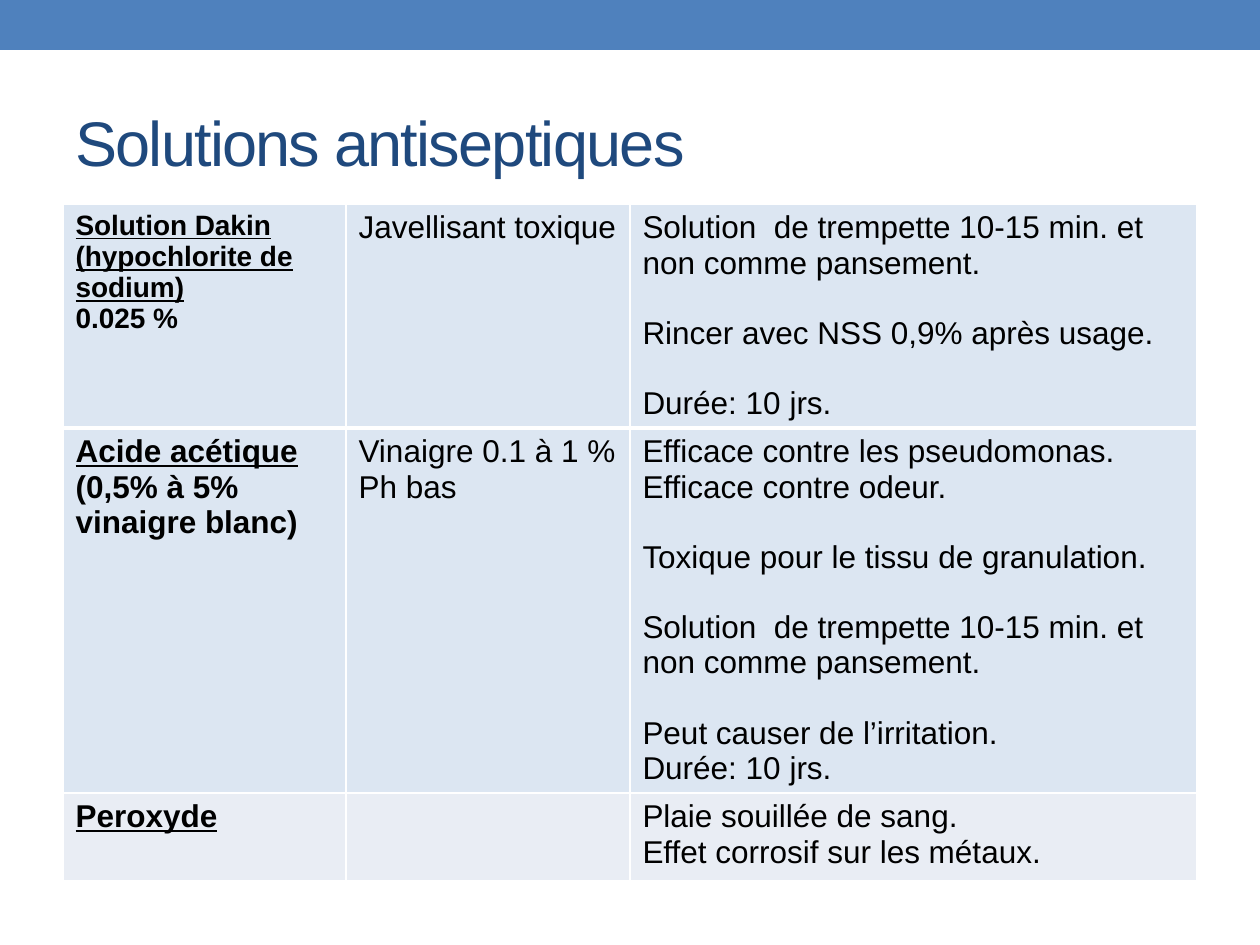
from dataclasses import dataclass

from lxml.etree import SubElement
from pptx import Presentation
from pptx.dml.color import RGBColor
from pptx.enum.shapes import MSO_SHAPE
from pptx.enum.text import MSO_ANCHOR
from pptx.oxml.ns import qn
from pptx.util import Emu, Pt

PX = 914400 // 126
WHITE, BLACK, BAND_BLUE, TITLE_BLUE = "FFFFFF", "000000", "4F81BD", "1F497D"
PALE_BLUE, PALE_GREY = "DCE6F2", "E9EDF4"

HEADING = {"bold": True, "underline": True}
DETAIL = {"bold": True, "underline": False}
PLAIN = {"bold": False, "underline": False}


@dataclass
class Line:
    text: str
    style: dict
    gap: int = 0  # points before the paragraph
    size: int = 18


@dataclass
class Antiseptic:
    name: list[Line]
    nature: list[Line]
    usage: list[Line]
    height: int
    fill: str


def px(length: int) -> Emu:
    return Emu(length * PX)


def color(value: str) -> RGBColor:
    return RGBColor.from_string(value)


def format_font(font, size: int, ink: str, style: dict) -> None:
    for attribute, value in {"name": "Arial", "size": Pt(size), **style}.items():
        setattr(font, attribute, value)
    font.color.rgb = color(ink)


def draw_border(cell, side: str, points: int) -> None:
    border = SubElement(cell._tc.get_or_add_tcPr(), qn(f"a:ln{side}"), w=str(Pt(points)))
    SubElement(SubElement(border, qn("a:solidFill")), qn("a:srgbClr"), val=WHITE)


def fill_cell(cell, lines: list[Line], fill: str, top: int, bottom: int) -> None:
    for side, points in {"L": 1, "R": 1, "T": top, "B": bottom}.items():
        draw_border(cell, side, points)
    cell.fill.solid()
    cell.fill.fore_color.rgb = color(fill)
    frame = cell.text_frame
    for index, line in enumerate(lines):
        paragraph = frame.add_paragraph() if index else frame.paragraphs[0]
        if line.gap:
            paragraph.space_before = Pt(line.gap)
        run = paragraph.add_run()
        run.text = line.text
        format_font(run.font, line.size, BLACK, line.style)


def draw_table(slide, rows: list[Antiseptic], widths: list[int]) -> None:
    height = sum(row.height for row in rows)
    table = slide.shapes.add_table(
        len(rows), len(widths), px(63), px(204), px(sum(widths)), px(height)
    ).table
    table.first_row = table.horz_banding = False
    for column, width in zip(table.columns, widths):
        column.width = px(width)
    for index, row in enumerate(rows):
        table.rows[index].height = px(row.height)
        # A thick rule separates the first row from the rest
        top, bottom = (3 if index == 1 else 1), (3 if index == 0 else 1)
        for column, lines in enumerate((row.name, row.nature, row.usage)):
            fill_cell(table.cell(index, column), lines, row.fill, top, bottom)


def draw_band(slide) -> None:
    band = slide.shapes.add_shape(MSO_SHAPE.RECTANGLE, 0, 0, px(1260), px(50))
    band.shadow.inherit = False
    band.fill.solid()
    band.fill.fore_color.rgb = color(BAND_BLUE)
    band.line.fill.background()


def draw_title(slide, text: str) -> None:
    frame = slide.shapes.add_textbox(px(63), px(73), px(1134), px(136)).text_frame
    frame.word_wrap = True
    frame.vertical_anchor = MSO_ANCHOR.MIDDLE
    run = frame.paragraphs[0].add_run()
    run.text = text
    format_font(run.font, 36, TITLE_BLUE, {})
    run.font._element.set("spc", "-100")


SOAK = "Solution  de trempette 10-15 min. et non comme pansement."
DURATION = "Durée: 10 jrs."
BLANK_LINE = 20

ANTISEPTICS = [
    Antiseptic(
        [Line("Solution Dakin (hypochlorite de sodium)", HEADING, size=16),
         Line("0.025 %", DETAIL, size=16)],
        [Line("Javellisant toxique", PLAIN)],
        [Line(SOAK, PLAIN),
         Line("Rincer avec NSS 0,9% après usage.", PLAIN, BLANK_LINE),
         Line(DURATION, PLAIN, BLANK_LINE)],
        224, PALE_BLUE,
    ),
    Antiseptic(
        [Line("Acide acétique", HEADING), Line("(0,5% à 5% vinaigre blanc)", DETAIL)],
        [Line("Vinaigre 0.1 à 1 %", PLAIN), Line("Ph bas", PLAIN)],
        [Line("Efficace contre les pseudomonas.", PLAIN),
         Line("Efficace contre odeur.", PLAIN),
         Line("Toxique pour le tissu de granulation.", PLAIN, BLANK_LINE),
         Line(SOAK, PLAIN, BLANK_LINE),
         Line("Peut causer de l’irritation.", PLAIN, BLANK_LINE),
         Line(DURATION, PLAIN)],
        365, PALE_BLUE,
    ),
    Antiseptic(
        [Line("Peroxyde", HEADING)],
        [],
        [Line("Plaie souillée de sang.", PLAIN),
         Line("Effet corrosif sur les métaux.", PLAIN)],
        88, PALE_GREY,
    ),
]


def main() -> None:
    deck = Presentation()
    deck.slide_width, deck.slide_height = px(1260), px(945)
    slide = deck.slides.add_slide(deck.slide_layouts[6])
    draw_band(slide)
    draw_table(slide, ANTISEPTICS, [283, 284, 567])
    draw_title(slide, "Solutions antiseptiques")
    deck.save("out.pptx")


if __name__ == "__main__":
    main()
